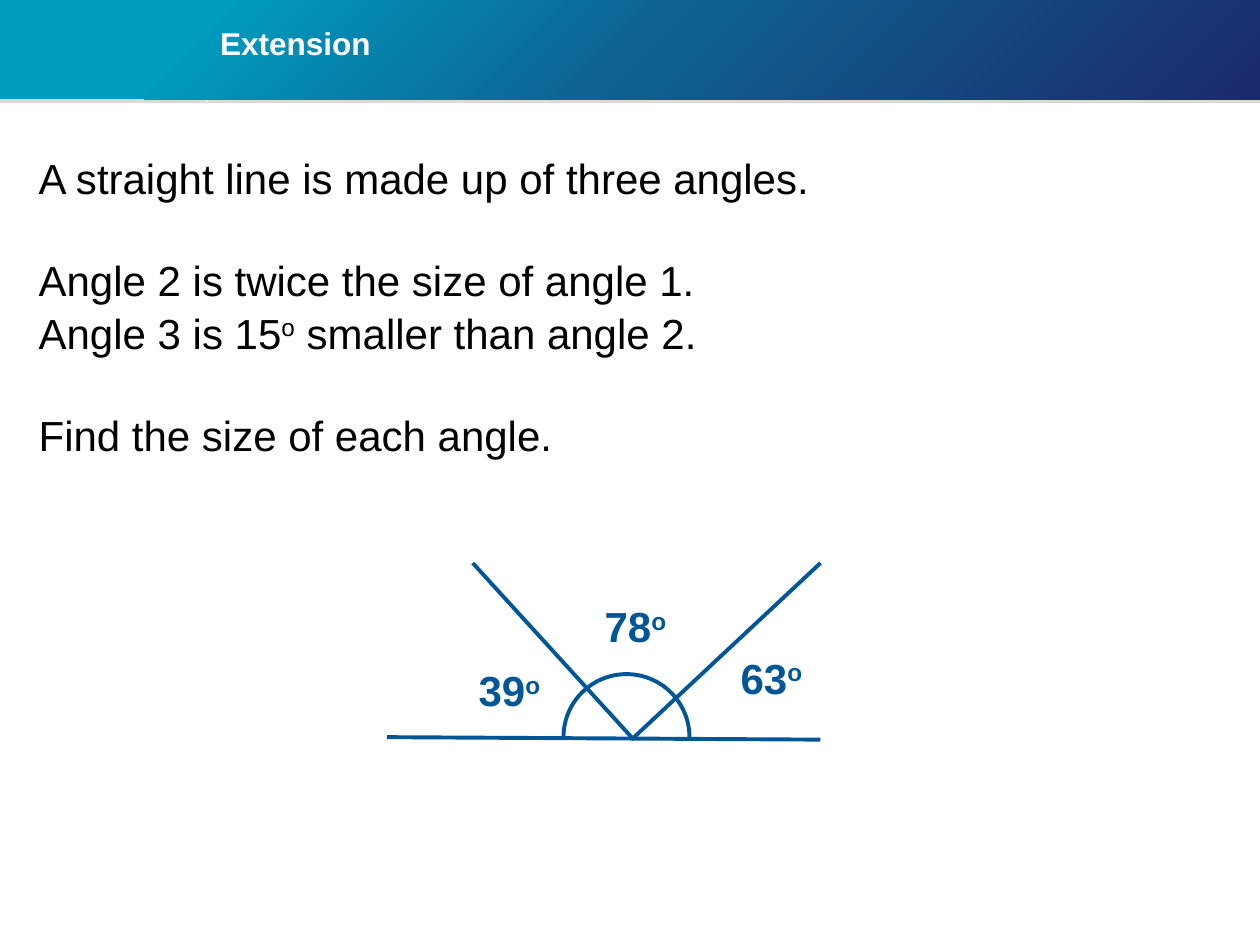
from dataclasses import dataclass

from lxml import etree
from pptx import Presentation
from pptx import util as u
from pptx.dml.color import RGBColor
from pptx.enum import shapes, text
from pptx.oxml.ns import qn


@dataclass(frozen=True)
class Theme:
    """Colours, type sizes and line widths of the slide."""
    font: str = "Arial"
    white: str = "FFFFFF"
    black: str = "000000"
    grey: str = "D9D9D9"
    blue: str = "005697"
    fade: tuple = ((17, "009BBD"), (50, "0E6394"), (100, "1B2A6B"))
    head: int = 18
    body: int = 24
    thin: float = 0.5
    thick: float = 2.25


T = Theme()


def rgb(code):
    """Turn a hex code into a colour."""
    return RGBColor.from_string(code)


def cms(*nums):
    """Turn numbers into centimetre lengths."""
    return [u.Cm(n) for n in nums]


def style(runs, size, tint, bold=False):
    """Format runs alike and raise each lone degree letter."""
    for run in runs:
        font = run.font
        font.name, font.size, font.bold = T.font, u.Pt(size), bold
        font.color.rgb = rgb(tint)
        if run.text == "o":
            run._r.get_or_add_rPr().set("baseline", "30000")


def label(slide, box, lines, size, tint, bold=False, wrap=True):
    """Add a text box, one paragraph for each tuple of runs."""
    frame = slide.shapes.add_textbox(*cms(*box)).text_frame
    frame.word_wrap = wrap
    for num, parts in enumerate(lines):
        para = frame.add_paragraph() if num else frame.paragraphs[0]
        for part in parts:
            para.add_run().text = part
        style(para.runs, size, tint, bold)
    return frame


def stroke(slide, start, end, tint, width):
    """Draw a straight line without a shadow."""
    line = slide.shapes.add_connector(
        shapes.MSO_CONNECTOR.STRAIGHT, *cms(*start, *end))
    line.line.color.rgb = rgb(tint)
    line.line.width = u.Pt(width)
    etree.SubElement(line._element.spPr, qn("a:effectLst"))


def bar(slide, box):
    """Add a plain rectangle without an outline."""
    rect = slide.shapes.add_shape(shapes.MSO_SHAPE.RECTANGLE, *cms(*box))
    rect.shadow.inherit = False
    rect.line.fill.background()
    return rect


def blend(rect):
    """Fill a rectangle with the diagonal fade of the theme."""
    rect.fill.gradient()
    rect.fill.gradient_angle = 315
    stops = rect._element.spPr.find(".//" + qn("a:gsLst"))
    for stop in list(stops):
        stops.remove(stop)
    for place, tint in T.fade:
        stop = etree.SubElement(stops, qn("a:gs"), pos=str(place * 1000))
        etree.SubElement(stop, qn("a:srgbClr"), val=tint)


def banner(slide, box):
    """Build the heading band with its grey edge and title."""
    x, y, w, h = box
    edge = bar(slide, box)
    edge.fill.solid()
    edge.fill.fore_color.rgb = rgb(T.grey)
    stroke(slide, (x + 4.17, y), (x + 4.17, y + 2.49), T.white, T.thin)
    blend(bar(slide, (x, y - 0.08, w, h)))
    frame = label(slide, (x + 4.19, y - 0.05, 17.04, 1.93),
                  [("Extension",)], T.head, T.white, bold=True)
    frame.vertical_anchor = text.MSO_ANCHOR.MIDDLE
    frame.paragraphs[0].line_spacing = 0.9


def task(slide, box):
    """Write the problem in three spaced groups."""
    lines = [("A straight line is made up of three angles.",),
             ("Angle 2 is twice the size of angle 1.",),
             ("Angle 3 is 15", "o", " smaller than angle 2."),
             ("Find the size of each angle.",)]
    frame = label(slide, box, lines, T.body, T.black)
    for num, para in enumerate(frame.paragraphs):
        para.line_spacing = 1.04
        para.space_before = u.Pt(28.8 if num in (1, 3) else 0)


def angles(slide, box):
    """Draw the straight line, its two rays, the arc and the sizes."""
    x, y, w, h = box
    rays = [((0, 3.51), (w, h)), ((4.93, h), (w, 0)), ((4.93, 3.51), (1.73, 0))]
    for (ax, ay), (bx, by) in rays:
        stroke(slide, (x + ax, y + ay), (x + bx, y + by), T.blue, T.thick)
    arc = slide.shapes.add_shape(
        shapes.MSO_SHAPE.ARC, *cms(x + 3.56, y + 2.24, 2.54, 2.54))
    arc.shadow.inherit = False
    arc.adjustments[0], arc.adjustments[1] = 107.1, 1.44
    arc.fill.background()
    arc.line.color.rgb = rgb(T.blue)
    arc.line.width = u.Pt(T.thick)
    for size, dx, dy in (("39", 1.6, 1.93), ("78", 4.14, 0.64), ("63", 6.88, 1.68)):
        label(slide, (x + dx, y + dy, 1.8, 1.27), [(size, "o")],
              T.body, T.blue, bold=True, wrap=False)


def main():
    """Build and save the slide."""
    deck = Presentation()
    deck.slide_width, deck.slide_height = cms(25.4, 19.05)
    slide = deck.slides.add_slide(deck.slide_layouts[6])
    banner(slide, (0, 0, 25.4, 2.08))
    task(slide, (0.53, 2.9, 23.95, 6.4))
    angles(slide, (7.8, 11.35, 8.74, 3.56))
    deck.save("out.pptx")


if __name__ == "__main__":
    main()
